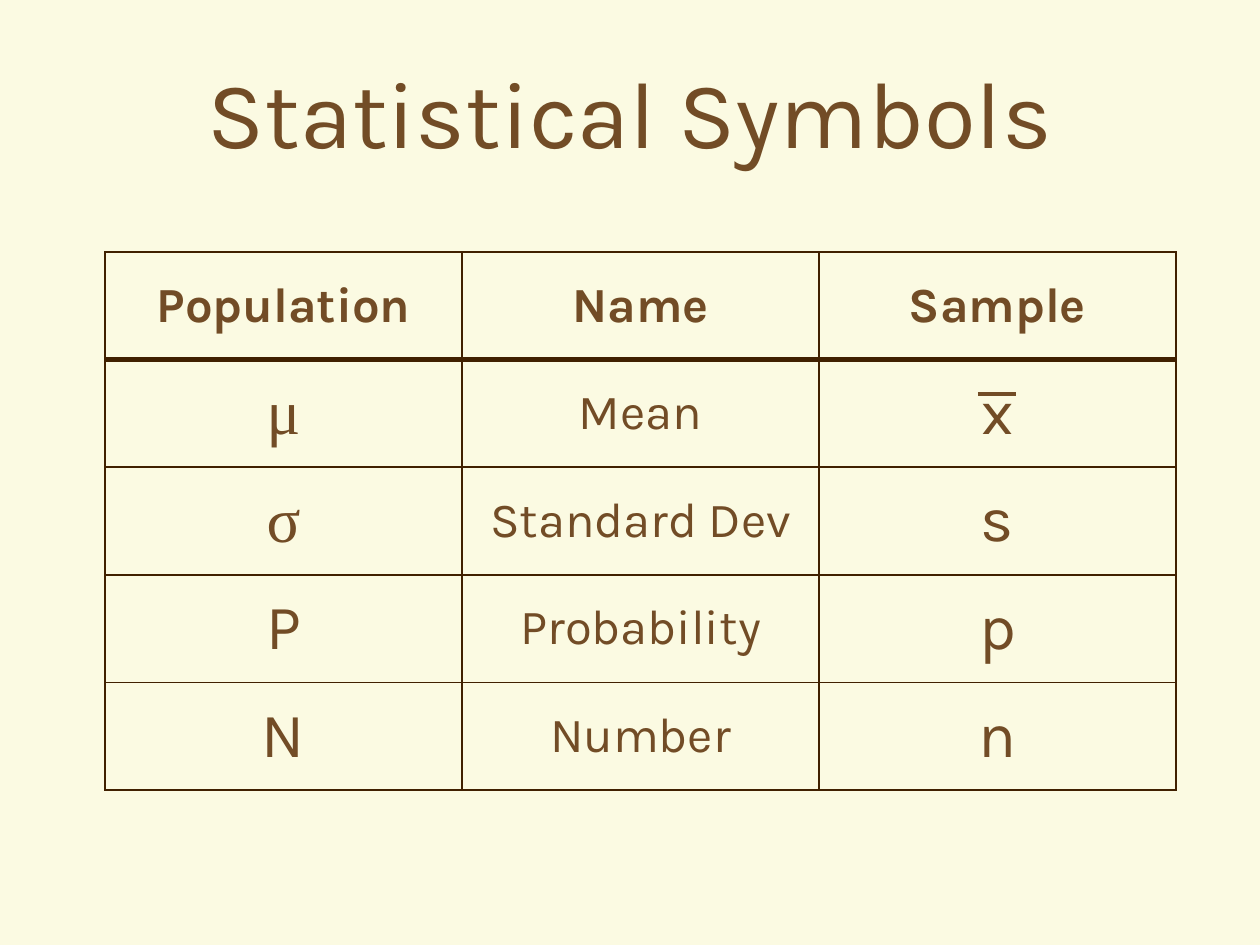
from lxml.etree import SubElement
from pptx import Presentation
from pptx.dml.color import RGBColor
from pptx.enum.shapes import MSO_CONNECTOR
from pptx.enum.text import MSO_ANCHOR, PP_ALIGN
from pptx.oxml import parse_xml
from pptx.oxml.ns import nsdecls, qn
from pptx.util import Pt

COLORS = {"background": "FBFAE2", "text": "724C26", "border": "402000"}
BODY_FONT = "Karla"
GREEK_FONT = "Times New Roman"
HEADERS = ["Population", "Name", "Sample"]
SYMBOLS = [
    ("μ", "Mean", "x"),
    ("σ", "Standard Dev", "s"),
    ("P", "Probability", "p"),
    ("N", "Number", "n"),
]


def color(name):
    return RGBColor.from_string(COLORS[name])


def write(frame, text, size=28, font=BODY_FONT, bold=False):
    frame.word_wrap = True
    para = frame.paragraphs[0]
    para.alignment = PP_ALIGN.CENTER
    span = para.add_run()
    span.text = text
    span.font.size = Pt(size)
    span.font.name = font
    span.font.bold = bold
    span.font.color.rgb = color("text")


def set_borders(cell, top=1, bottom=1):
    properties = cell._tc.get_or_add_tcPr()
    widths = {"lnL": 1, "lnR": 1, "lnT": top, "lnB": bottom}
    for index, (side, width) in enumerate(widths.items()):
        properties.insert(index, parse_xml(
            f'<a:{side} {nsdecls("a")} w="{Pt(width)}"><a:solidFill>'
            f'<a:srgbClr val="{COLORS["border"]}"/></a:solidFill></a:{side}>'
        ))


def add_title(page, left, top, width, height):
    box = page.shapes.add_textbox(Pt(left), Pt(top), Pt(width), Pt(height))
    box.text_frame.vertical_anchor = MSO_ANCHOR.MIDDLE
    write(box.text_frame, "Statistical Symbols", size=54)


def add_symbol_table(page, left, top, width, height):
    rows = [HEADERS, *SYMBOLS]
    table = page.shapes.add_table(
        len(rows), len(HEADERS), Pt(left), Pt(top), Pt(width), Pt(height)
    ).table
    table.horz_banding = False
    table.first_row = False
    for row, texts in enumerate(rows):
        for column, text in enumerate(texts):
            cell = table.cell(row, column)
            cell.vertical_anchor = MSO_ANCHOR.MIDDLE
            cell.fill.solid()
            cell.fill.fore_color.rgb = color("background")
            set_borders(cell, top=3 if row == 1 else 1, bottom=3 if row == 0 else 1)
            symbol = row > 0 and column != 1
            write(
                cell.text_frame,
                text,
                size=36 if symbol else 28,
                font=GREEK_FONT if text in "μσ" else BODY_FONT,
                bold=row == 0,
            )


def add_mean_bar(page, left, top, width):
    bar = page.shapes.add_connector(
        MSO_CONNECTOR.STRAIGHT, Pt(left), Pt(top), Pt(left + width), Pt(top)
    )
    bar.line.color.rgb = color("text")
    bar.line.width = Pt(2.25)
    SubElement(bar._element.spPr, qn("a:effectLst"))


def main():
    deck = Presentation()
    deck.slide_width, deck.slide_height = Pt(720), Pt(540)
    page = deck.slides.add_slide(deck.slide_layouts[6])
    page.background.fill.solid()
    page.background.fill.fore_color.rgb = color("background")
    add_title(page, 0, 0, 720, 126)
    add_symbol_table(page, 60, 144, 612, 307.5)
    add_mean_bar(page, 558.75, 225, 21.75)
    deck.save("out.pptx")


if __name__ == "__main__":
    main()
